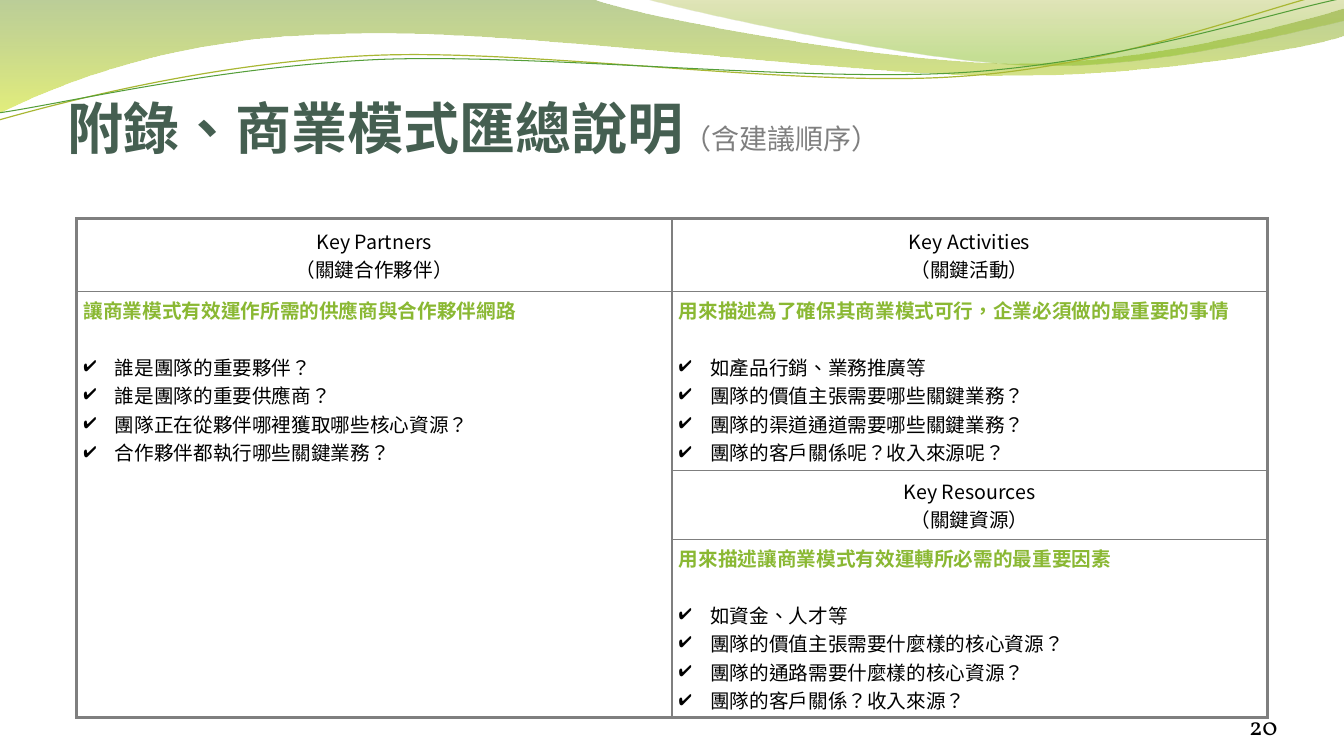
from dataclasses import dataclass

from lxml.etree import SubElement
from pptx import Presentation
from pptx.dml.color import RGBColor
from pptx.enum.text import MSO_ANCHOR, PP_ALIGN
from pptx.oxml import parse_xml
from pptx.oxml.ns import nsdecls, qn
from pptx.util import Inches, Pt


@dataclass(frozen=True)
class Theme:
    title: str = "455F51"
    grey: str = "7F7F7F"
    green: str = "8AB833"
    black: str = "000000"
    tc: str = "Noto Sans CJK TC"
    sc: str = "Noto Sans CJK SC"
    serif: str = "Vollkorn"
    big: int = 40
    mid: int = 20
    page: int = 18
    body: int = 14
    thick: float = 2.25
    thin: float = 1


THEME = Theme()

# Each wave: start point, then line ends (2 numbers) or curves (6 numbers)
BANDS = [
    ((0, 0), [
        (5.87, -0.01),
        (6.34, 0.17, 8.84, 0.63, 10.11, 0.63),
        (11.37, 0.63, 12.77, 0.26, 13.33, 0.09),
        (13.34, 0.36),
        (13.11, 0.44, 11.59, 0.76, 9.94, 0.75),
        (8.29, 0.75, 5.09, 0.28, 3.43, 0.34),
        (1.72, 0.36, 0.61, 0.83, -0.02, 1.13),
        (0, 0),
    ], [(0, "69921C", 45), (1, "CCE10F", 55)]),
    ((6.38, -0.01), [
        (6.79, 0.11, 9.09, 0.62, 10.25, 0.65),
        (11.4, 0.69, 12.82, 0.32, 13.33, 0.21),
        (13.33, 0),
        (6.38, -0.01),
    ], [(0, "9BAA1A", 30), (0.8, "81BA16", 45)]),
]
LINES = [
    ((-0.01, 1.19), [
        (0.63, 1.01, 2.1, 0.62, 3.69, 0.55),
        (5.27, 0.48, 7.89, 0.87, 9.49, 0.76),
        (11.1, 0.66, 12.51, 0.08, 13.3, -0.1),
    ], "A9B733", 0.85),
    ((-0.01, 1.12), [
        (0.62, 1.03, 2.18, 0.66, 3.77, 0.59),
        (5.37, 0.53, 7.96, 0.82, 9.55, 0.72),
        (11.14, 0.62, 12.55, 0.14, 13.33, -0.02),
    ], "549E39", 0.75),
]

WIDTH, COLS = 11.81, 2
ROWS = [0.72, 1.78, 0.68, 1.77]
HEADS = {
    (0, 0): "Key Partners\n（關鍵合作夥伴）",
    (0, 1): "Key Activities\n（關鍵活動）",
    (2, 1): "Key Resources\n（關鍵資源）",
}
NOTES = {
    (1, 0): ["讓商業模式有效運作所需的供應商與合作夥伴網路",
             "誰是團隊的重要夥伴？",
             "誰是團隊的重要供應商？",
             "團隊正在從夥伴哪裡獲取哪些核心資源？",
             "合作夥伴都執行哪些關鍵業務？"],
    (1, 1): ["用來描述為了確保其商業模式可行，企業必須做的最重要的事情",
             "如產品行銷、業務推廣等",
             "團隊的價值主張需要哪些關鍵業務？",
             "團隊的渠道通道需要哪些關鍵業務？",
             "團隊的客戶關係呢？收入來源呢？"],
    (3, 1): ["用來描述讓商業模式有效運轉所必需的最重要因素",
             "如資金、人才等",
             "團隊的價值主張需要什麼樣的核心資源？",
             "團隊的通路需要什麼樣的核心資源？",
             "團隊的客戶關係？收入來源？"],
}


def style(run, face, size, color, bold=False):
    font = run.font
    font.size, font.bold, font.name = Pt(size), bold, face
    font.color.rgb = RGBColor.from_string(color)
    props = run._r.get_or_add_rPr()
    props.set("lang", "zh-TW")
    SubElement(props, qn("a:ea"), typeface=face)


# Waves
def add_wave(slide, start, parts, close):
    pen = slide.shapes.build_freeform(*map(Inches, start))
    spots = [(Inches(x), Inches(y))
             for part in parts for x, y in zip(part[::2], part[1::2])]
    pen.add_line_segments(spots, close=close)
    wave = pen.convert_to_shape()
    wave.shadow.inherit = False
    # Join each three points of a curve into one Bezier
    legs = wave._element.spPr.iter(qn("a:lnTo"))
    legs = iter(list(legs))
    for part in parts:
        leg = next(legs)
        if len(part) == 6:
            leg.tag = qn("a:cubicBezTo")
            for _ in range(2):
                extra = next(legs)
                leg.append(extra[0])
                extra.getparent().remove(extra)
    return wave


def add_band(slide, start, parts, stops):
    band = add_wave(slide, start, parts, True)
    band.line.fill.background()
    band.fill.gradient()
    band.fill.gradient_angle = 270
    for stop, (place, color, _) in zip(band.fill.gradient_stops, stops):
        stop.position = place
        stop.color.rgb = RGBColor.from_string(color)
    tints = band._element.spPr.iter(qn("a:srgbClr"))
    for tint, (_, _, alpha) in zip(tints, stops):
        SubElement(tint, qn("a:alpha"), val=str(alpha * 1000))


def add_curve(slide, start, parts, color, width):
    curve = add_wave(slide, start, parts, False)
    curve.fill.background()
    curve.line.color.rgb = RGBColor.from_string(color)
    curve.line.width = Pt(width)


# Text boxes
def add_text(slide, box, runs, top=0, align=PP_ALIGN.LEFT):
    frame = slide.shapes.add_textbox(*map(Inches, box)).text_frame
    frame.word_wrap = True
    frame.vertical_anchor = MSO_ANCHOR.BOTTOM
    frame.margin_left = frame.margin_right = frame.margin_bottom = 0
    frame.margin_top = Inches(top)
    para = frame.paragraphs[0]
    para.alignment = align
    for text, *look in runs:
        run = para.add_run()
        run.text = text
        style(run, *look)


# Table
def set_edges(cell, row, col):
    outer = {
        "L": col == 0,
        "R": col == COLS - 1,
        "T": row == 0,
        "B": row + cell.span_height == len(ROWS),
    }
    props = cell._tc.get_or_add_tcPr()
    for spot, (side, edge) in enumerate(outer.items()):
        width = Pt(THEME.thick if edge else THEME.thin)
        props.insert(spot, parse_xml(
            f'<a:ln{side} {nsdecls("a")} w="{width}"><a:solidFill>'
            f'<a:srgbClr val="{THEME.grey}"/></a:solidFill></a:ln{side}>'))


def add_tick(para):
    props = para._p.get_or_add_pPr()
    props.set("marL", str(Inches(0.31)))
    props.set("indent", str(-Inches(0.31)))
    tint = SubElement(props, qn("a:buClr"))
    SubElement(tint, qn("a:srgbClr"), val=THEME.black)
    SubElement(props, qn("a:buChar"), char="✔")


def fill_head(cell, text):
    cell.text_frame.text = text
    cell.vertical_anchor = MSO_ANCHOR.MIDDLE
    for para in cell.text_frame.paragraphs:
        para.alignment = PP_ALIGN.CENTER
        style(para.runs[0], THEME.tc, THEME.body, THEME.black)


def fill_notes(cell, notes):
    cell.text_frame.text = "\n".join(notes)
    lead, *items = cell.text_frame.paragraphs
    lead.space_after = Pt(20.4)
    style(lead.runs[0], THEME.tc, THEME.body, THEME.green, True)
    for item in items:
        add_tick(item)
        style(item.runs[0], THEME.tc, THEME.body, THEME.black)


def add_grid(slide):
    box = map(Inches, (0.76, 2.17, WIDTH, sum(ROWS)))
    grid = slide.shapes.add_table(len(ROWS), COLS, *box).table
    grid.first_row = grid.horz_banding = False
    for row, height in zip(grid.rows, ROWS):
        row.height = Inches(height)
    grid.cell(1, 0).merge(grid.cell(3, 0))
    for r in range(len(ROWS)):
        for c in range(COLS):
            cell = grid.cell(r, c)
            cell.margin_left = cell.margin_right = Inches(0.07)
            cell.margin_top = cell.margin_bottom = Inches(0.04)
            cell.fill.background()
            set_edges(cell, r, c)
            if (r, c) in HEADS:
                fill_head(cell, HEADS[r, c])
            elif (r, c) in NOTES:
                fill_notes(cell, NOTES[r, c])


def main():
    deck = Presentation()
    deck.slide_width, deck.slide_height = Inches(13.33), Inches(7.5)
    slide = deck.slides.add_slide(deck.slide_layouts[6])
    for band in BANDS:
        add_band(slide, *band)
    for line in LINES:
        add_curve(slide, *line)
    add_text(slide, (0.67, 0.73, 12, 0.86), [
        ("附錄", THEME.tc, THEME.big, THEME.title, True),
        ("、商業模式匯總說明", THEME.sc, THEME.big, THEME.title, True),
        ("（含建議順序）", THEME.sc, THEME.mid, THEME.grey),
    ], top=0.05)
    add_grid(slide)
    add_text(slide, (11.56, 6.95, 1.11, 0.4),
             [("20", THEME.serif, THEME.page, THEME.black)],
             align=PP_ALIGN.RIGHT)
    deck.save("out.pptx")


if __name__ == "__main__":
    main()
